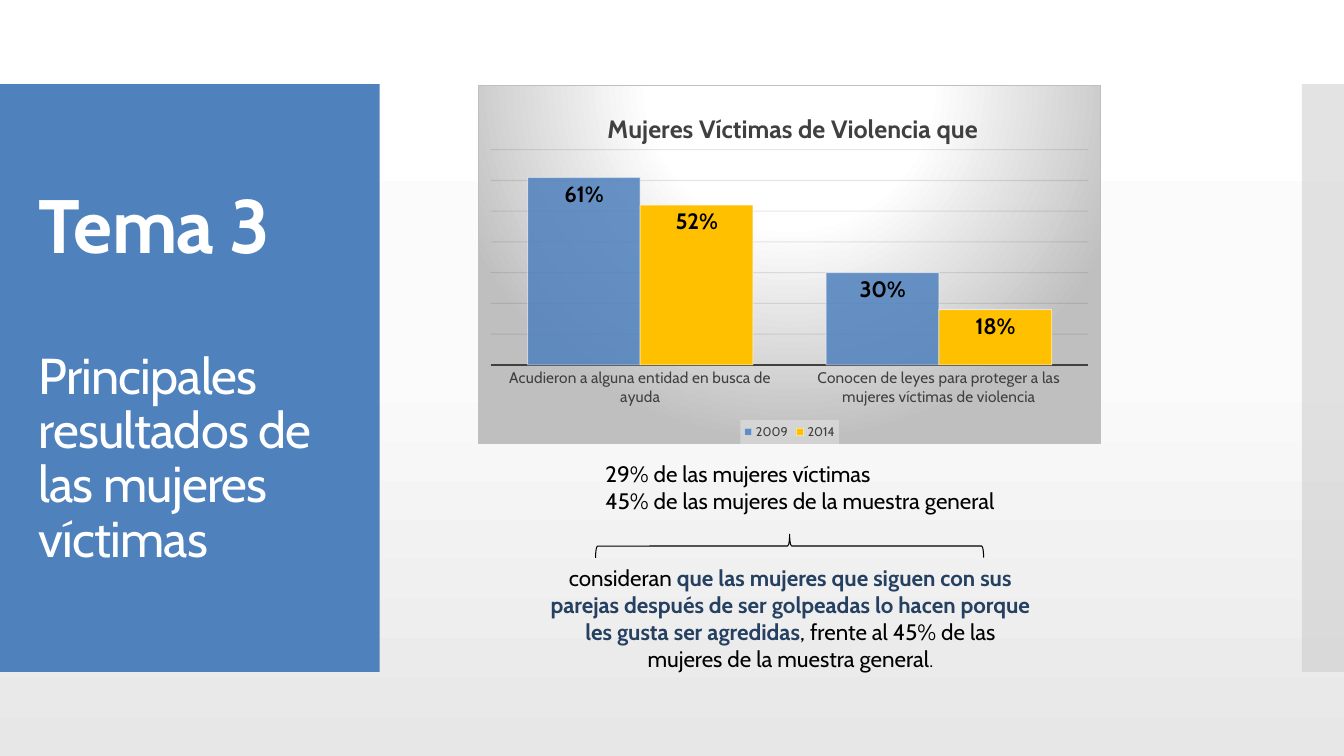
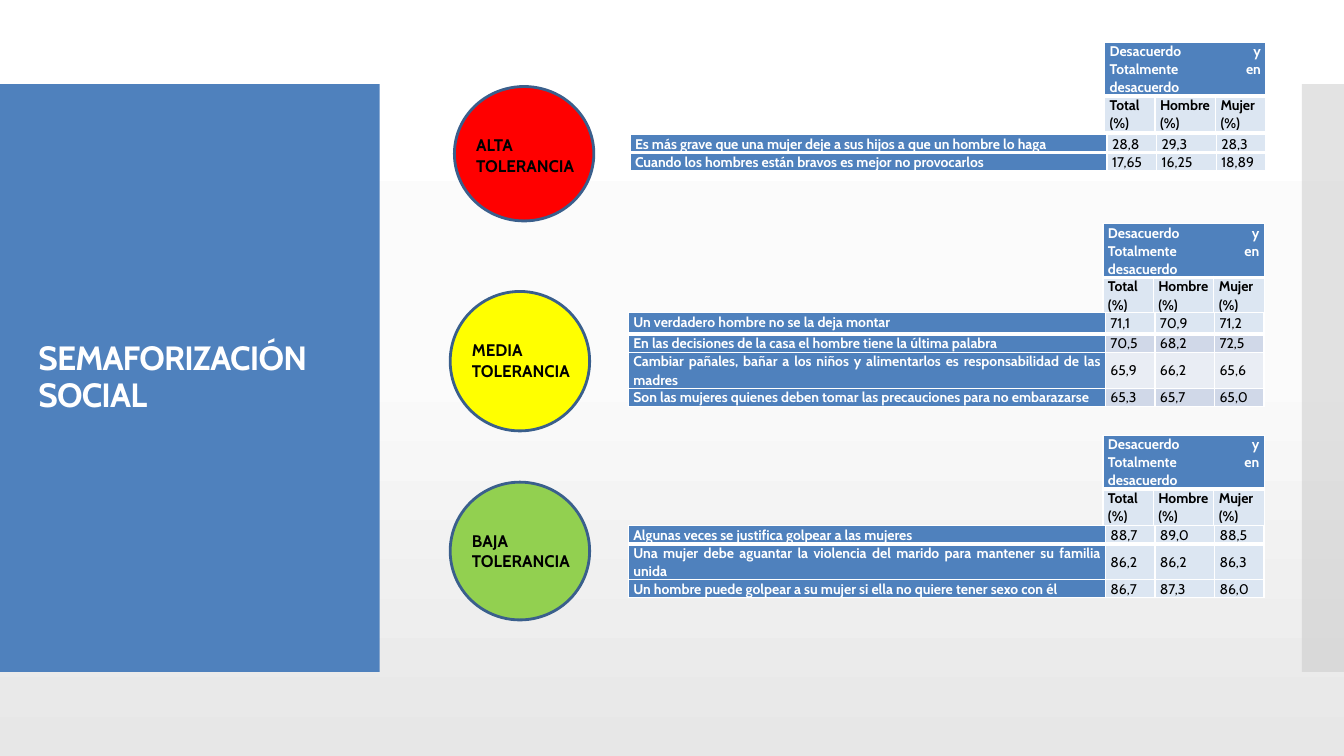
from copy import deepcopy
from dataclasses import dataclass

from lxml.etree import SubElement
from pptx import Presentation
from pptx.chart.data import CategoryChartData
from pptx.dml.color import RGBColor
from pptx.enum.chart import XL_CHART_TYPE, XL_LABEL_POSITION, XL_LEGEND_POSITION, XL_TICK_MARK
from pptx.enum.shapes import MSO_SHAPE
from pptx.enum.text import MSO_ANCHOR, PP_ALIGN
from pptx.oxml import parse_xml
from pptx.oxml.ns import nsdecls, qn
from pptx.util import Inches, Pt


@dataclass(frozen=True)
class Theme:
    font: str = "Cabin"
    blue: str = "4F81BD"
    navy: str = "254061"
    rim: str = "3A5F8C"
    gold: str = "FFC000"
    pale: str = "DCE6F2"
    mid: str = "D0D8E8"
    light: str = "E9EDF4"
    gray: str = "C8C8C8"
    edge: str = "BFBFBF"
    ink: str = "404040"
    black: str = "000000"
    white: str = "FFFFFF"
    huge: int = 54
    big: int = 36
    head: int = 24
    title: int = 18
    body: int = 16
    small: int = 14
    label: int = 12
    axis: int = 11
    cell: int = 10
    key: int = 9


T = Theme()
RGB = RGBColor.from_string
CELL = Inches(1) / 12  # the slide is a grid of 160 columns and 90 rows
NS = nsdecls("a", "c")


def grid(*cells):
    """Turn counts of grid cells into lengths."""
    return [round(n * CELL) for n in cells]


def write(frame, text, size=T.body, color=T.black, bold=False, align=None,
          lead=None, before=None, track=None, join=False):
    """Add one paragraph per line; join continues the last paragraph."""
    for line in text.split("\n"):
        para = frame.paragraphs[-1]
        if para.runs and not join:
            para = frame.add_paragraph()
        if align is not None:
            para.alignment = align
        if lead:
            para.line_spacing = lead
        if before:
            para.space_before = Pt(before)
        run = para.add_run()
        run.text = line
        run.font.name, run.font.size, run.font.bold = T.font, Pt(size), bold
        run.font.color.rgb = RGB(color)
        if track:
            run.font._element.set("spc", str(round(track * 100)))


deck = Presentation()
deck.slide_width, deck.slide_height = grid(160, 90)
blank = deck.slide_layouts[6]
for holder in list(blank.placeholders):
    holder._element.getparent().remove(holder._element)
sheer = []  # colours and their opacity in percent

# Shared background
back = deck.slide_master.background.fill
back.gradient()
back.gradient_angle = 270
first = back.gradient_stops[0]._gs
first.addnext(deepcopy(first))
for stop, (place, tone) in zip(back.gradient_stops,
                               [(0, T.white), (0.48, "FBFBFB"), (1, "E7E7E7")]):
    stop.position, stop.color.rgb = place, RGB(tone)

# Slides and their titles
slides = []
for lines in [
    [("Tema 3", T.huge, True, None),
     ("Principales resultados de las mujeres víctimas", T.big, False, 58)],
    [("SEMAFORIZACIÓN\nSOCIAL", T.head, True, None)],
]:
    slide = deck.slides.add_slide(blank)
    slides.append(slide)
    frame = slide.shapes.add_textbox(*grid(3.4, 14.8, 38.6, 60.4)).text_frame
    frame.word_wrap, frame.vertical_anchor = True, MSO_ANCHOR.MIDDLE
    for text, size, bold, before in lines:
        write(frame, text, size=size, color=T.white, bold=bold, lead=0.9,
              before=before, track=-0.6)
facts, lights = slides

# Side bands, drawn once and moved to the layout
for left, width, tone, share in [(0, 45.2, T.blue, 100), (155, 5, T.gray, 50)]:
    band = facts.shapes.add_shape(MSO_SHAPE.RECTANGLE, *grid(left, 10, width, 70))
    band.shadow.inherit = False
    band.fill.solid()
    band.fill.fore_color.rgb = RGB(tone)
    band.line.fill.background()
    sheer.append((band.fill.fore_color, share))
    blank.shapes._spTree.append(band._element)

# Slide 1: brace and statements
brace = facts.shapes.add_shape(MSO_SHAPE.LEFT_BRACE, *grid(92.6, 41.9, 2.8, 46.2))
brace.rotation = 90
brace.shadow.inherit = False
brace.fill.background()
brace.line.color.rgb, brace.line.width = RGB(T.black), Pt(0.75)

frame = facts.shapes.add_textbox(*grid(64.2, 66.6, 59.8, 14.2)).text_frame
frame.word_wrap = True
for text, look in [
    ("consideran ", {}),
    ("que las mujeres que siguen con sus parejas después de ser golpeadas "
     "lo hacen porque les gusta ser agredidas", {"color": T.navy, "bold": True}),
    (", frente al 45% de las mujeres de la muestra general", {}),
    (".", {"size": T.small}),
]:
    write(frame, text, align=PP_ALIGN.CENTER, join=True, **look)

frame = facts.shapes.add_textbox(*grid(70.9, 54.2, 49.9, 7.7)).text_frame
frame.word_wrap = True
write(frame, "29% de las mujeres víctimas\n45% de las mujeres de la muestra general")

# Slide 1: chart
data = CategoryChartData(number_format="0%")
data.categories = ["Acudieron a alguna entidad en busca de ayuda",
                   "Conocen de leyes para proteger a las mujeres víctimas de violencia"]
data.add_series("2009", (0.61, 0.3))
data.add_series("2014", (0.52, 0.18))
chart = facts.shapes.add_chart(XL_CHART_TYPE.COLUMN_CLUSTERED,
                               *grid(56.9, 10.1, 74.2, 42.8), data).chart
chart.has_title = chart.has_legend = True
write(chart.chart_title.text_frame, "Mujeres Víctimas de Violencia que",
      size=T.title, color=T.ink, bold=True)
legend, cats, vals = chart.legend, chart.category_axis, chart.value_axis
legend.position, legend.include_in_layout = XL_LEGEND_POSITION.BOTTOM, False
plot = chart.plots[0]
plot.gap_width, plot.overlap, plot.vary_by_categories = 65, 0, False

fonts = [(chart.font, T.cell, T.black), (legend.font, T.key, T.ink),
         (cats.tick_labels.font, T.axis, T.ink)]
for bar, tone, share in zip(plot.series, (T.blue, T.gold), (85, 100)):
    bar.format.fill.solid()
    bar.format.fill.fore_color.rgb = RGB(tone)
    bar.format.line.color.rgb, bar.format.line.width = RGB(T.white), Pt(0.75)
    sheer += [(bar.format.fill.fore_color, share), (bar.format.line.color, 50)]
    marks = bar.data_labels
    marks.show_value, marks.position = True, XL_LABEL_POSITION.INSIDE_END
    marks.number_format, marks.number_format_is_linked = "0%", False
    marks.font.bold = True
    fonts.append((marks.font, T.body, T.black))
for font, size, tone in fonts:
    font.name, font.size, font.color.rgb = T.font, Pt(size), RGB(tone)

cats.major_tick_mark = XL_TICK_MARK.NONE
cats.format.line.color.rgb, cats.format.line.width = RGB(T.ink), Pt(1.5)
vals.visible, vals.has_major_gridlines = False, True
vals.minimum_scale, vals.maximum_scale, vals.major_unit = 0, 0.7, 0.1
rule = vals.major_gridlines.format.line
rule.color.rgb, rule.width = RGB("0D0D0D"), Pt(0.75)
sheer.append((rule.color, 10))

stops = "".join(f'<a:gs pos="{place}000"><a:srgbClr val="{tone}"/></a:gs>'
                for place, tone in [(0, T.white), (39, T.white), (100, T.edge)])
glow = (f'<a:gradFill><a:gsLst>{stops}</a:gsLst><a:path path="circle">'
        '<a:fillToRect l="50000" t="-80000" r="50000" b="180000"/></a:path></a:gradFill>'
        f'<a:ln w="{Pt(0.75)}"><a:solidFill><a:srgbClr val="{T.edge}"/></a:solidFill></a:ln>')
haze = ('<a:solidFill><a:srgbClr val="F2F2F2"><a:alpha val="39000"/></a:srgbClr></a:solidFill>'
        '<a:ln><a:noFill/></a:ln>')
for node, look in [(chart._chartSpace, glow), (legend._element, haze)]:
    node.find(qn("c:txPr")).addprevious(parse_xml(f"<c:spPr {NS}>{look}</c:spPr>"))

area = next(chart._chartSpace.iter(qn("c:plotArea")))
for node, spot, shares in [
    (area, 0, {"x": 0.02, "y": 0.18, "w": 0.96, "h": 0.6}),
    (chart.chart_title._element, 1, {"x": 0.2, "y": 0.06}),
]:
    old = node.find(qn("c:layout"))
    if old is not None:
        node.remove(old)
    target = '<c:layoutTarget val="inner"/>' if node is area else ""
    modes = "".join(f'<c:{side}Mode val="edge"/>' for side in "xy")
    sizes = "".join(f'<c:{side} val="{share}"/>' for side, share in shares.items())
    node.insert(spot, parse_xml(f"<c:layout {NS}><c:manualLayout>{target}{modes}{sizes}"
                                "</c:manualLayout></c:layout>"))

# Slide 2: lights, each with a heading table and a body table
heads = [["Desacuerdo y Totalmente en desacuerdo", "", ""],
         ["Total (%)", "Hombre (%)", "Mujer (%)"]]
levels = [
    ("ALTA TOLERANCIA", "FF0000", (54.1, 10.3, 16.6, 16), 5, (75, 16), (2, 2),
     [T.pale] * 2, [
        ["Es más grave que una mujer deje a sus hijos a que un hombre lo haga",
         "28,8", "29,3", "28,3"],
        ["Cuando los hombres están bravos es mejor no provocarlos",
         "17,65", "16,25", "18,89"]]),
    ("MEDIA\nTOLERANCIA", "FFFF00", (53.6, 34.7, 16.6, 16.6), 26.6, (74.8, 37.2),
     (2.6, 2, 4.2, 2), [T.pale, T.mid, T.light, T.mid], [
        ["Un verdadero hombre no se la deja montar", "71,1", "70,9", "71,2"],
        ["En las decisiones de la casa el hombre tiene la última palabra",
         "70,5", "68,2", "72,5"],
        ["Cambiar pañales, bañar a los niños y alimentarlos es responsabilidad de las madres",
         "65,9", "66,2", "65,6"],
        ["Son las mujeres quienes deben tomar las precauciones para no embarazarse",
         "65,3", "65,7", "65,0"]]),
    ("BAJA\nTOLERANCIA", "92D050", (53.6, 57.4, 16.6, 16.4), 51.8, (74.8, 62.6),
     (2, 4.2, 2), [T.pale] * 3, [
        ["Algunas veces se justifica golpear a las mujeres", "88,7", "89,0", "88,5"],
        ["Una mujer debe aguantar la violencia del marido para mantener su familia unida",
         "86,2", "86,2", "86,3"],
        ["Un hombre puede golpear a su mujer si ella no quiere tener sexo con él",
         "86,7", "87,3", "86,0"]]),
]
for name, tone, spot, top, (left, low), tall, tints, rows in levels:
    light = lights.shapes.add_shape(MSO_SHAPE.OVAL, *grid(*spot))
    light.shadow.inherit = False
    light.fill.solid()
    light.fill.fore_color.rgb = RGB(tone)
    light.line.color.rgb, light.line.width = RGB(T.rim), Pt(2)
    frame = lights.shapes.add_textbox(
        *grid(spot[0] + 1.4, spot[1] + 5.2, 14.6, 6)).text_frame
    frame.word_wrap = True
    write(frame, name, size=T.label, bold=True)

    for head, x, y, wide, high, hues, words in [
        (True, left + 56.5, top, (6, 7.2, 6), (6.3, 4.3), [T.blue, T.pale], heads),
        (False, left, low, (56.8, 5.9, 7.1, 5.9), tall, tints, rows),
    ]:
        table = lights.shapes.add_table(
            len(high), len(wide), *grid(x, y, sum(wide), sum(high))).table
        for col, width in zip(table.columns, grid(*wide)):
            col.width = width
        for row, height in zip(table.rows, grid(*high)):
            row.height = height
        if head:
            table.cell(0, 0).merge(table.cell(0, 2))
        for r, line in enumerate(words):
            for c, text in enumerate(line):
                cell = table.cell(r, c)
                dark = r == 0 if head else c == 0
                cell.margin_left = cell.margin_right = Inches(0.05)
                cell.margin_top = cell.margin_bottom = 0
                cell.vertical_anchor = MSO_ANCHOR.MIDDLE
                if head and r:
                    cell.vertical_anchor = MSO_ANCHOR.BOTTOM
                elif dark and not head:
                    cell.vertical_anchor = MSO_ANCHOR.TOP
                for side in "LRTB":
                    width = Pt(3 if side == "B" and r == 0 else 1)
                    cell._tc.get_or_add_tcPr().append(parse_xml(
                        f'<a:ln{side} {NS} w="{width}"><a:solidFill>'
                        f'<a:srgbClr val="{T.white}"/></a:solidFill></a:ln{side}>'))
                cell.fill.solid()
                cell.fill.fore_color.rgb = RGB(T.blue if dark else hues[r])
                if text:
                    write(cell.text_frame, text, size=T.cell, bold=head or dark,
                          color=T.white if dark else T.black,
                          align=PP_ALIGN.JUSTIFY, lead=1.07)

for color, share in sheer:
    if share < 100:
        SubElement(color._color._xClr, qn("a:alpha"), val=str(share * 1000))

deck.save("out.pptx")
